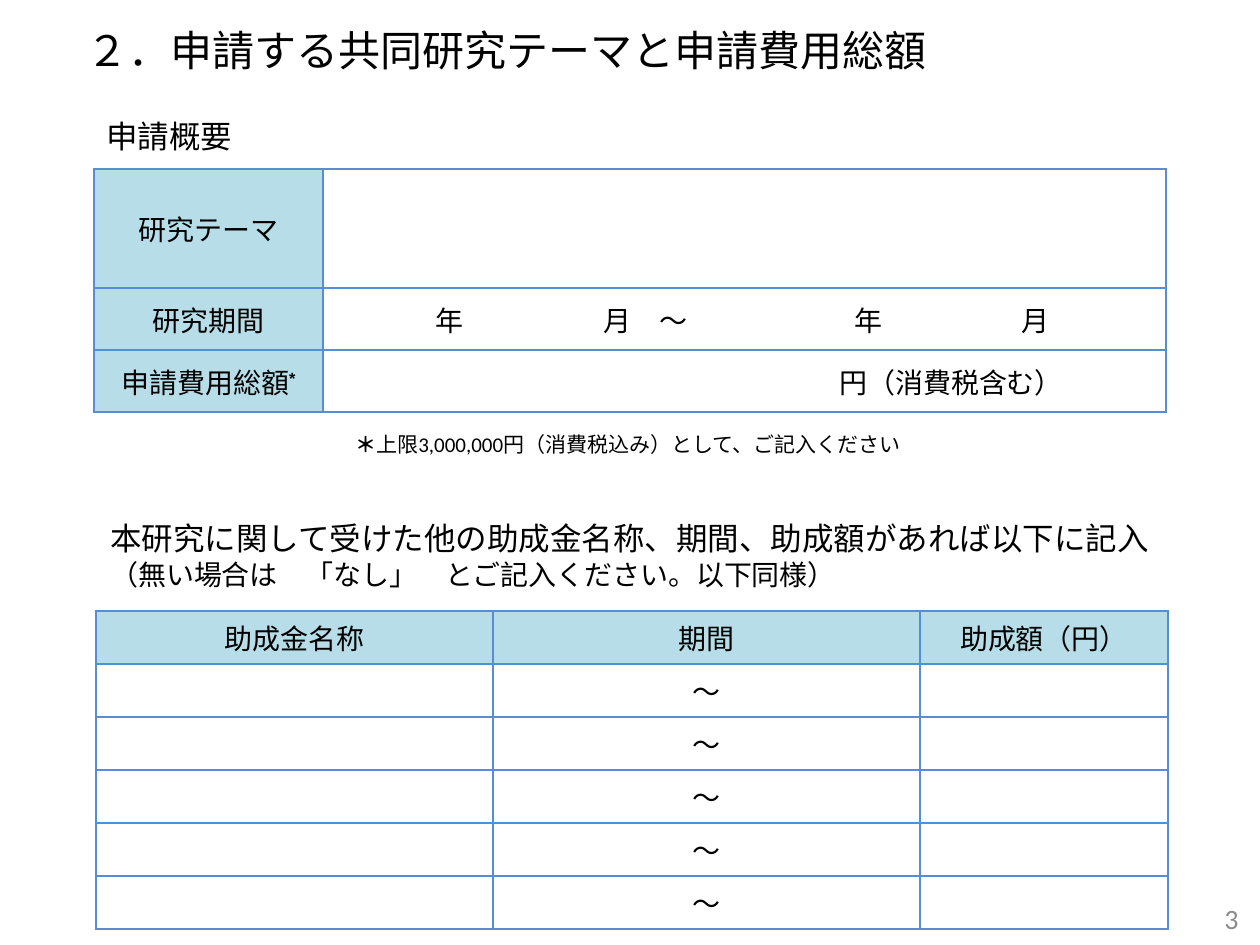
import pptx
import pptx.dml.color
import pptx.enum.text
import pptx.oxml
import pptx.oxml.ns
import pptx.util

EMU_PER_PX = 914400 / 126
COLORS = {"text": "000000", "border": "558ED5", "header": "B7DEE8", "number": "8C8C8C"}
ALIGN = pptx.enum.text.PP_ALIGN
MIDDLE = pptx.enum.text.MSO_ANCHOR.MIDDLE
NAMESPACE = pptx.oxml.ns.nsdecls("a")


def px(length):
    return pptx.util.Emu(round(length * EMU_PER_PX))


def rgb(name):
    return pptx.dml.color.RGBColor.from_string(COLORS[name])


class FormSlide:
    """Style and current slide of the application form."""

    body_font, table_font, table_size = "Calibri", "Arial", 16
    border_width = pptx.util.Pt(1.5)

    def __init__(self, presentation):
        self.slide = presentation.slides.add_slide(presentation.slide_layouts[5])

    def style(self, paragraph, size, font, color="text", align=ALIGN.LEFT):
        paragraph.alignment = align
        paragraph.font.size = pptx.util.Pt(size)
        paragraph.font.name = font
        paragraph.font.color.rgb = rgb(color)

    def fill_text(self, shape, box, lines, color="text", align=ALIGN.LEFT):
        """Place a shape and write its (text, size) lines."""
        shape.left, shape.top, shape.width, shape.height = map(px, box)
        frame = shape.text_frame
        frame.word_wrap = True
        frame.auto_size = pptx.enum.text.MSO_AUTO_SIZE.NONE
        frame.vertical_anchor = MIDDLE
        frame.text = "\n".join(text for text, size in lines)
        for paragraph, (text, size) in zip(frame.paragraphs, lines):
            self.style(paragraph, size, self.body_font, color, align)
        return shape

    def title(self, box, text, size):
        return self.fill_text(self.slide.shapes.title, box, [(text, size)])

    def text(self, box, *lines, **options):
        shape = self.slide.shapes.add_textbox(*map(px, box))
        return self.fill_text(shape, box, lines, **options)

    def border(self, cell):
        properties = cell._tc.get_or_add_tcPr()
        for index, side in enumerate("LRTB"):
            properties.insert(index, pptx.oxml.parse_xml(
                f'<a:ln{side} {NAMESPACE} w="{self.border_width}"><a:solidFill>'
                f'<a:srgbClr val="{COLORS["border"]}"/></a:solidFill></a:ln{side}>'))

    def table(self, left, top, widths, heights, rows, is_header):
        box = (left, top, sum(widths), sum(heights))
        frame = self.slide.shapes.add_table(len(heights), len(widths), *map(px, box))
        table = frame.table
        table.first_row = table.horz_banding = False
        for column, width in zip(table.columns, widths):
            column.width = px(width)
        for row, height in zip(table.rows, heights):
            row.height = px(height)
        for r, texts in enumerate(rows):
            for c, text in enumerate(texts):
                cell = table.cell(r, c)
                cell.text = text
                cell.vertical_anchor = MIDDLE
                self.style(cell.text_frame.paragraphs[0], self.table_size,
                           self.table_font, align=ALIGN.CENTER)
                if is_header(r, c):
                    cell.fill.solid()
                    cell.fill.fore_color.rgb = rgb("header")
                else:
                    cell.fill.background()
                self.border(cell)
        return table

    def tab_stops(self, cell, margin, stops):
        """Left-align a cell's text from a margin, with tab stops after it."""
        cell.margin_left = px(margin)
        paragraph = cell.text_frame.paragraphs[0]
        paragraph.alignment = ALIGN.LEFT
        tabs = "".join(f'<a:tab pos="{px(stop)}" algn="l"/>' for stop in stops)
        properties = paragraph._p.get_or_add_pPr()
        position = 0 if properties.find(pptx.oxml.ns.qn("a:defRPr")) is not None else len(properties)
        properties.insert(position, pptx.oxml.parse_xml(
            f"<a:tabLst {NAMESPACE}>{tabs}</a:tabLst>"))


def main():
    presentation = pptx.Presentation()
    presentation.slide_width, presentation.slide_height = px(1260), px(945)
    form = FormSlide(presentation)

    # Title and page number
    form.title((74, 6, 873, 88), "２．申請する共同研究テーマと申請費用総額", 24)
    form.text((958, 893, 293, 50), ("3", 16), color="number", align=ALIGN.RIGHT)

    # Application summary
    form.text((94, 106, 1071, 59), ("申請概要", 18))
    summary = form.table(
        94, 169, [229, 843], [119, 62, 62],
        [["研究テーマ", ""],
         ["研究期間", "年\t月\t～\t年\t月"],
         ["申請費用総額", "円（消費税含む）"]],
        is_header=lambda row, column: column == 0)
    form.tab_stops(summary.cell(1, 1), 113, [168, 224, 419, 586])
    amount = summary.cell(2, 1)
    amount.margin_right = px(103)
    amount.text_frame.paragraphs[0].alignment = ALIGN.RIGHT

    # Footnote mark and footnote
    mark = summary.cell(2, 0).text_frame.paragraphs[0].add_run()
    mark.text = "*"
    mark.font.bold = True
    mark.font._element.set("baseline", "30000")
    note = form.text((343, 423, 605, 42), ("＊", 12))
    paragraph = note.text_frame.paragraphs[0]
    paragraph.runs[0].font.bold = True
    paragraph.add_run().text = "上限3,000,000円（消費税込み）として、ご記入ください"

    # Other grants
    form.text((98, 515, 1071, 80),
              ("本研究に関して受けた他の助成金名称、期間、助成額があれば以下に記入", 18),
              ("（無い場合は　「なし」　とご記入ください。以下同様）", 16))
    form.table(
        96, 611, [397, 427, 248], [53] * 6,
        [["助成金名称", "期間", "助成額（円）"]] + [["", "～", ""]] * 5,
        is_header=lambda row, column: row == 0)

    presentation.save("out.pptx")


if __name__ == "__main__":
    main()
